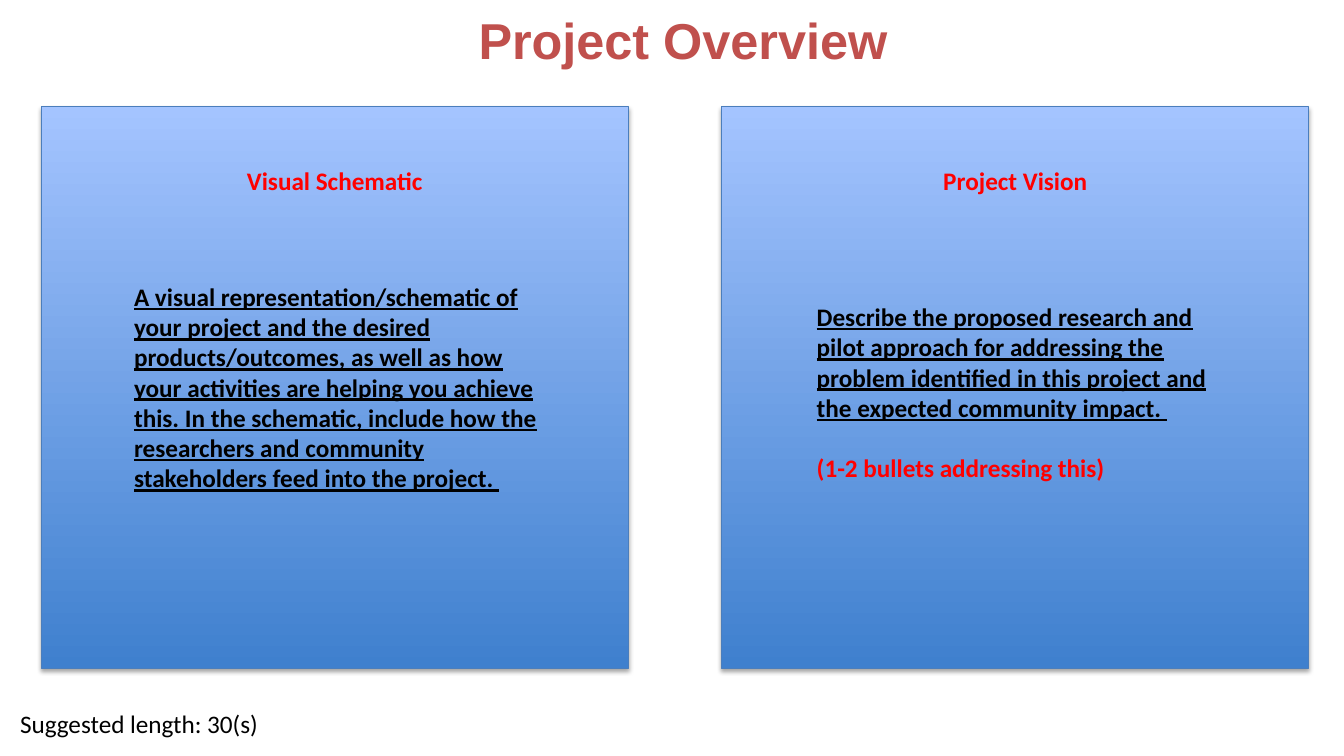
import pptx
import pptx.util
import pptx.dml.color
import pptx.enum.shapes
import pptx.enum.text
import lxml.etree

Inches, Pt = pptx.util.Inches, pptx.util.Pt
RGBColor = pptx.dml.color.RGBColor
Align = pptx.enum.text.PP_ALIGN
Anchor = pptx.enum.text.MSO_ANCHOR
AutoSize = pptx.enum.text.MSO_AUTO_SIZE

BLACK = RGBColor(0x00, 0x00, 0x00)
RED = RGBColor(0xFF, 0x00, 0x00)
BRICK = RGBColor(0xC0, 0x50, 0x4D)
CARD_BOTTOM = RGBColor(0x3F, 0x80, 0xCE)
CARD_TOP = RGBColor(0xA4, 0xC4, 0xFF)
CARD_EDGE = RGBColor(0x4B, 0x7E, 0xBC)

TITLE = "Project Overview"
LENGTH_HINT = "Suggested length: 30(s)"
CARDS = [
    {
        "heading": "Visual Schematic",
        "prompt": "A visual representation/schematic of your project and the desired "
                  "products/outcomes, as well as how your activities are helping you "
                  "achieve this. In the schematic, include how the researchers and "
                  "community stakeholders feed into the project. ",
        "hint": None,
        "prompt_box": (0.32, 2.74, 4.77, 2.22),  # left is measured from the card
    },
    {
        "heading": "Project Vision",
        "prompt": "Describe the proposed research and pilot approach for addressing the "
                  "problem identified in this project and the expected community impact. ",
        "hint": "(1-2 bullets addressing this)",
        "prompt_box": (0.34, 2.94, 4.65, 1.92),
    },
]

CARD_LEFT, CARD_TOP_EDGE = 0.41, 1.06
CARD_WIDTH, CARD_HEIGHT = 5.82, 5.57
CARD_PITCH = 6.75
HEADING_TOP, LINE_HEIGHT = 1.59, 0.4
PROMPT_INDENT = 0.6
BLANK_LINE = 21.6

A = "http://schemas.openxmlformats.org/drawingml/2006/main"
SHADOW = (f'<a:outerShdw xmlns:a="{A}" blurRad="40000" dist="23000" dir="5400000" '
          'rotWithShape="0"><a:srgbClr val="000000"><a:alpha val="35000"/>'
          '</a:srgbClr></a:outerShdw>')


def style(paragraph, color, bold=False, underline=False, size=18, face="Calibri"):
    font = paragraph.font
    font.name, font.size = face, Pt(size)
    font.bold, font.underline = bold, underline
    font.color.rgb = color


def add_text(slide, box, text, wrap=True):
    frame = slide.shapes.add_textbox(*map(Inches, box)).text_frame
    frame.word_wrap = wrap
    frame.text = text
    return frame


def add_panel(slide, left):
    panel = slide.shapes.add_shape(
        pptx.enum.shapes.MSO_SHAPE.RECTANGLE,
        *map(Inches, (left, CARD_TOP_EDGE, CARD_WIDTH, CARD_HEIGHT)))
    panel.fill.gradient()
    panel.fill.gradient_angle = 90
    for stop, position, color in zip(panel.fill.gradient_stops, (0, 1),
                                     (CARD_BOTTOM, CARD_TOP)):
        stop.position, stop.color.rgb = position, color
    panel.line.color.rgb = CARD_EDGE
    panel.line.width = Pt(0.75)
    panel.shadow.inherit = False
    effects = panel._element.spPr.find(f"{{{A}}}effectLst")
    effects.append(lxml.etree.fromstring(SHADOW))


def add_card(slide, left, card):
    add_panel(slide, left)
    heading = add_text(slide, (left, HEADING_TOP, CARD_WIDTH, LINE_HEIGHT),
                       card["heading"]).paragraphs[0]
    heading.alignment = Align.CENTER
    style(heading, RED, bold=True)

    offset, top, width, height = card["prompt_box"]
    prompt = add_text(slide, (left + offset, top, width, height), card["prompt"])
    prompt.margin_left = Inches(PROMPT_INDENT)
    style(prompt.paragraphs[0], BLACK, bold=True, underline=True)
    if card["hint"]:
        hint = prompt.add_paragraph()
        hint.text = card["hint"]
        hint.space_before = Pt(BLANK_LINE)
        style(hint, RED, bold=True)


def add_title(slide):
    title = slide.shapes.title
    title.left, title.top, title.width, title.height = map(
        Inches, (1.41, 0.11, 10.73, 0.57))
    frame = title.text_frame
    frame.text = TITLE
    frame.auto_size = AutoSize.NONE
    frame.vertical_anchor = Anchor.MIDDLE
    frame.paragraphs[0].alignment = Align.CENTER
    style(frame.paragraphs[0], BRICK, bold=True, size=36, face="Arial")


def main():
    deck = pptx.Presentation()
    deck.slide_width, deck.slide_height = Inches(13.33), Inches(7.5)
    slide = deck.slides.add_slide(deck.slide_layouts.get_by_name("Title Only"))
    add_title(slide)
    for column, card in enumerate(CARDS):
        add_card(slide, CARD_LEFT + column * CARD_PITCH, card)
    length_hint = add_text(slide, (0.1, 6.98, 2.59, LINE_HEIGHT), LENGTH_HINT, wrap=False)
    style(length_hint.paragraphs[0], BLACK)
    deck.save("out.pptx")


if __name__ == "__main__":
    main()
